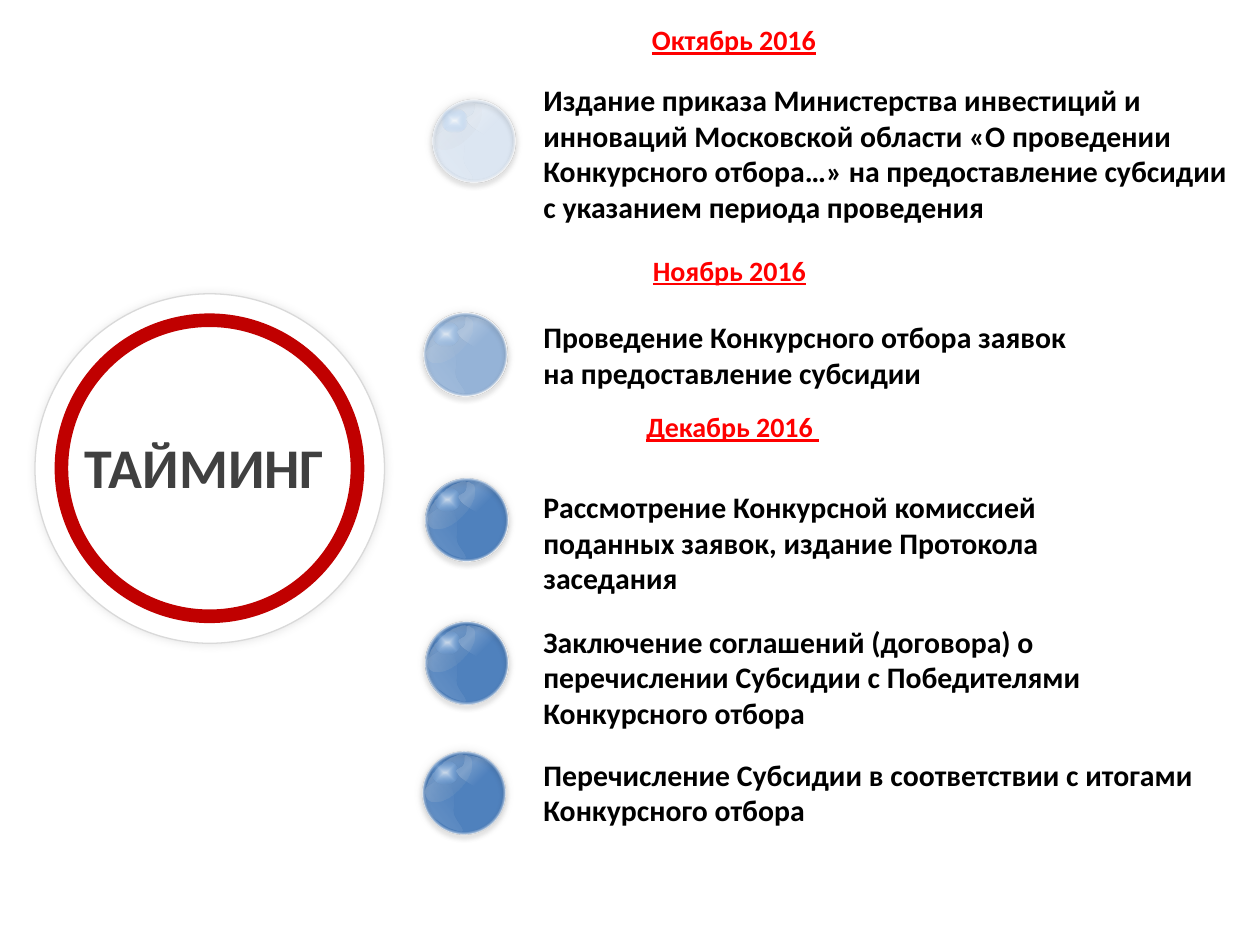
import math
from copy import deepcopy
from lxml import etree
from pptx import Presentation
from pptx import util as u
from pptx.dml import color
from pptx.enum import shapes, text
from pptx.oxml import ns

COLUMNS, ROWS = 100, 75
COLOURS = {
    "white": "FFFFFF", "black": "000000", "red": "FF0000", "ring": "C00000",
    "title": "404040", "rim": "D9D9D9", "halo": "BFBFBF", "grey": "B6B6B6", "sky": "67ABF5",
    "pale": "DCE6F2", "middle": "95B3D7", "deep": "4F81BD",
}
FORMATS = {
    "month": {"size": u.Pt(16), "bold": True, "underline": True, "name": "Calibri"},
    "step": {"size": u.Pt(17), "bold": True, "name": "Calibri"},
    "title": {"size": u.Pt(32), "bold": True, "name": "Calibri"},
}
BALL = 6.6
MONTHS = [
    ("Октябрь 2016", (37.4, 1.3, 41.7, 3.7)),
    ("Ноябрь 2016", (37.04, 19.6, 41.7, 3.7)),
    ("Декабрь 2016 ", (32.66, 32, 51, 3.7)),
]
STEP_LEFT = 42.14
STEPS = [
    ("Издание приказа Министерства инвестиций и инноваций Московской области "
     "«О проведении Конкурсного отбора…» на предоставление субсидии \n"
     "с указанием периода проведения", 6, 59.9, 12.5, "pale", (34.3, 7.9)),
    ("Проведение Конкурсного отбора заявок \nна предоставление субсидии",
     24.8, 59.3, 6.7, "middle", (33.64, 24.84)),
    ("Рассмотрение Конкурсной комиссией \nподанных заявок, издание Протокола \nзаседания",
     38.3, 51, 9.6, "deep", (33.74, 37.96)),
    ("Заключение соглашений (договора) о перечислении Субсидии с Победителями "
     "Конкурсного отбора", 48.98, 54.4, 6.7, "deep", (33.74, 49.34)),
    ("Перечисление Субсидии в соответствии с итогами Конкурсного отбора",
     59.54, 60.1, 6.7, "deep", (33.54, 59.64)),
]
UPPER_SHEEN = [
    (.53, .05), (.47, .05), (.52, .12), (.48, .17), (.47, .2), (.36, .21), (.42, .27),
    (.44, .35), (.76, .47), (.79, .58), (.82, .67), (.8, .68), (.83, .67),
    (.86, .65), (.97, .59), (.98, .5), (.98, .41), (.91, .24), (.83, .17),
    (.76, .09), (.59, .05), (.53, .05),
]
LEFT_SHEEN = [
    (.33, .27), (.3, .29), (.2, .33), (.15, .38), (.11, .41), (.05, .44), (.03, .48),
    (.02, .55), (.03, .62), (.06, .67), (.08, .73), (.11, .79), (.15, .82),
    (.2, .86), (.27, .91), (.33, .94), (.38, .95), (.48, 1), (.48, .97),
    (.5, .94), (.39, .83), (.38, .77), (.36, .71), (.39, .64), (.38, .58),
    (.38, .5), (.33, .39), (.32, .35), (.3, .29), (.35, .27), (.33, .27),
]


def rgb(name):
    return color.RGBColor.from_string(COLOURS[name])


def emu(box):
    return [u.Inches(10 * value / COLUMNS) for value in box]


def inside(box, share):
    left, top, width, height = box
    x, y, w, h = share
    return left + x * width, top + y * height, w * width, h * height


def tint(parent, name, alpha):
    node = etree.SubElement(parent, ns.qn("a:srgbClr"), val=COLOURS[name])
    etree.SubElement(node, ns.qn("a:alpha"), val=str(alpha * 1000))


def gradient(shape, stops, angle=None, kind="circle", focus=(50, 50, 50, 50)):
    shape.fill.background()
    fill = etree.Element(ns.qn("a:gradFill"), rotWithShape="1")
    stop_list = etree.SubElement(fill, ns.qn("a:gsLst"))
    for place, name, alpha in stops:
        tint(etree.SubElement(stop_list, ns.qn("a:gs"), pos=str(place * 1000)), name, alpha)
    if angle is not None:
        etree.SubElement(fill, ns.qn("a:lin"), ang=str(angle * 60000), scaled="0")
    else:
        shade = etree.SubElement(fill, ns.qn("a:path"))
        shade.set("path", kind)
        sides = {side: str(value * 1000) for side, value in zip("ltrb", focus)}
        etree.SubElement(shade, ns.qn("a:fillToRect"), **sides)
    old = shape._element.spPr.find(ns.qn("a:noFill"))
    old.getparent().replace(old, fill)


def cast_shadow(shape, name, alpha, blur, distance=0, angle=0):
    effects = shape._element.spPr.find(ns.qn("a:effectLst"))
    shadow = etree.SubElement(
        effects, ns.qn("a:outerShdw"), blurRad=str(u.Pt(blur)), dist=str(u.Pt(distance)),
        dir=str(angle * 60000), algn="ctr", rotWithShape="0")
    tint(shadow, name, alpha)


def add_preset(canvas, box, fill=None, preset=shapes.MSO_SHAPE.OVAL, turn=0):
    shape = canvas.add_shape(preset, *emu(box))
    shape.shadow.inherit = False
    shape.line.fill.background()
    shape.rotation = turn
    if fill:
        shape.fill.solid()
        shape.fill.fore_color.rgb = rgb(fill)
    return shape


def add_line(shape, name):
    shape.line.color.rgb = rgb(name)
    shape.line.width = u.Pt(.75)


def turned(point, pivot, degrees):
    angle = math.radians(degrees)
    x, y = point[0] - pivot[0], point[1] - pivot[1]
    return (pivot[0] + x * math.cos(angle) - y * math.sin(angle),
            pivot[1] + x * math.sin(angle) + y * math.cos(angle))


def add_sheen(canvas, box, curve, pivot, turn, stops, **shade):
    level = [turned(point, pivot, -turn) for point in curve]
    placed = [emu(inside(box, (x, y, 0, 0))[:2]) for x, y in level]
    builder = canvas.build_freeform(*placed[0])
    builder.add_line_segments(placed[1:], close=True)
    shape = builder.convert_to_shape()
    lines = list(shape._element.iter(ns.qn("a:lnTo")))
    for start in range(0, len(curve) - 1, 3):
        bezier = etree.Element(ns.qn("a:cubicBezTo"))
        lines[start].addprevious(bezier)
        for line in lines[start:start + 3]:
            bezier.append(line[0])
    for line in lines:
        line.getparent().remove(line)
    shape.rotation = turn
    shape.shadow.inherit = False
    shape.line.fill.background()
    gradient(shape, stops, **shade)


def add_text(page, box, words, style, ink, align=text.PP_ALIGN.LEFT):
    frame = page.shapes.add_textbox(*emu(box)).text_frame
    frame.word_wrap = True
    para = frame.paragraphs[0]
    para.text = words
    para.alignment = align
    for span in para.runs:
        for key, value in FORMATS[style].items():
            setattr(span.font, key, value)
        span.font.color.rgb = rgb(ink)
    for line_break in para._p.findall(ns.qn("a:br")):
        line_break.append(deepcopy(para.runs[0]._r.rPr))


def add_glow(canvas, box, turn, end):
    glow = add_preset(canvas, box, turn=turn)
    gradient(glow, [(0, "white", 33), (end, "grey", 0)], angle=90)


def add_ball(page, box, fill):
    base = add_preset(page.shapes, box, fill)
    cast_shadow(base, "halo", 40, 5)
    gloss = page.shapes.add_group_shape().shapes
    edge = add_preset(gloss, box)
    gradient(edge, [(0, "white", 0), (65, "white", 0), (74, "white", 100)])
    add_line(edge, "white")
    line_colour = edge.line._ln.find(".//" + ns.qn("a:srgbClr"))
    etree.SubElement(line_colour, ns.qn("a:alpha"), val="25000")
    cast_shadow(edge, "black", 35, 3.1, 1.8, 90)
    add_glow(gloss, inside(box, (-.04, .14, .7, .36)), 315, 100)
    glint = add_preset(gloss, inside(box, (.11, .11, .32, .29)))
    gradient(glint, [(0, "white", 65), (100, "sky", 0)], kind="shape")
    add_sheen(gloss, box, UPPER_SHEEN, (.67, .36), 90,
              [(50, "white", 0), (74, "white", 19), (100, "white", 0)], focus=(100, 100, 0, 0))
    add_sheen(gloss, box, LEFT_SHEEN, (.27, .61), 97.3,
              [(0, "white", 0), (28, "white", 0), (74, "white", 11)], angle=45)
    add_glow(gloss, inside(box, (.38, .55, .7, .36)), 135, 20)


def add_title_disc(page, box):
    disc = add_preset(page.shapes, box, "white")
    add_line(disc, "rim")
    cast_shadow(disc, "halo", 40, 5)
    ring = add_preset(page.shapes, inside(box, (.056, .056, .886, .886)), "ring",
                      shapes.MSO_SHAPE.DONUT)
    ring.adjustments[0] = .044
    add_text(page, inside(box, (.06, .38, .85, .23)), "ТАЙМИНГ", "title", "title",
             text.PP_ALIGN.CENTER)


def add_timeline(page):
    for words, top, width, height, fill, corner in STEPS:
        add_ball(page, (*corner, BALL, BALL), fill)
        add_text(page, (STEP_LEFT, top, width, height), words, "step", "black")
    for words, box in MONTHS:
        add_text(page, box, words, "month", "red", text.PP_ALIGN.CENTER)


def main():
    deck = Presentation()
    deck.slide_width, deck.slide_height = emu((COLUMNS, ROWS))
    page = deck.slides.add_slide(deck.slide_layouts[6])
    add_title_disc(page, (2.78, 23.32, 27.74, 27.74))
    add_timeline(page)
    deck.save("out.pptx")


if __name__ == "__main__":
    main()
